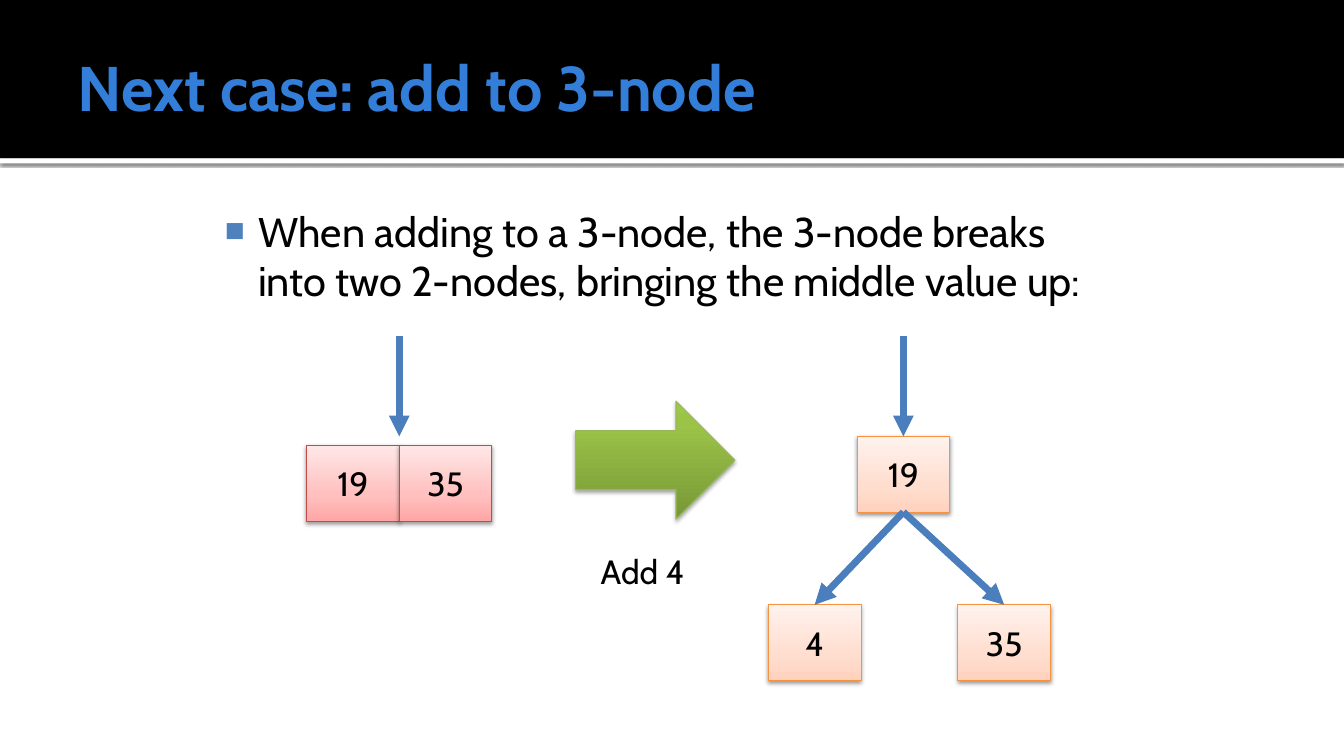
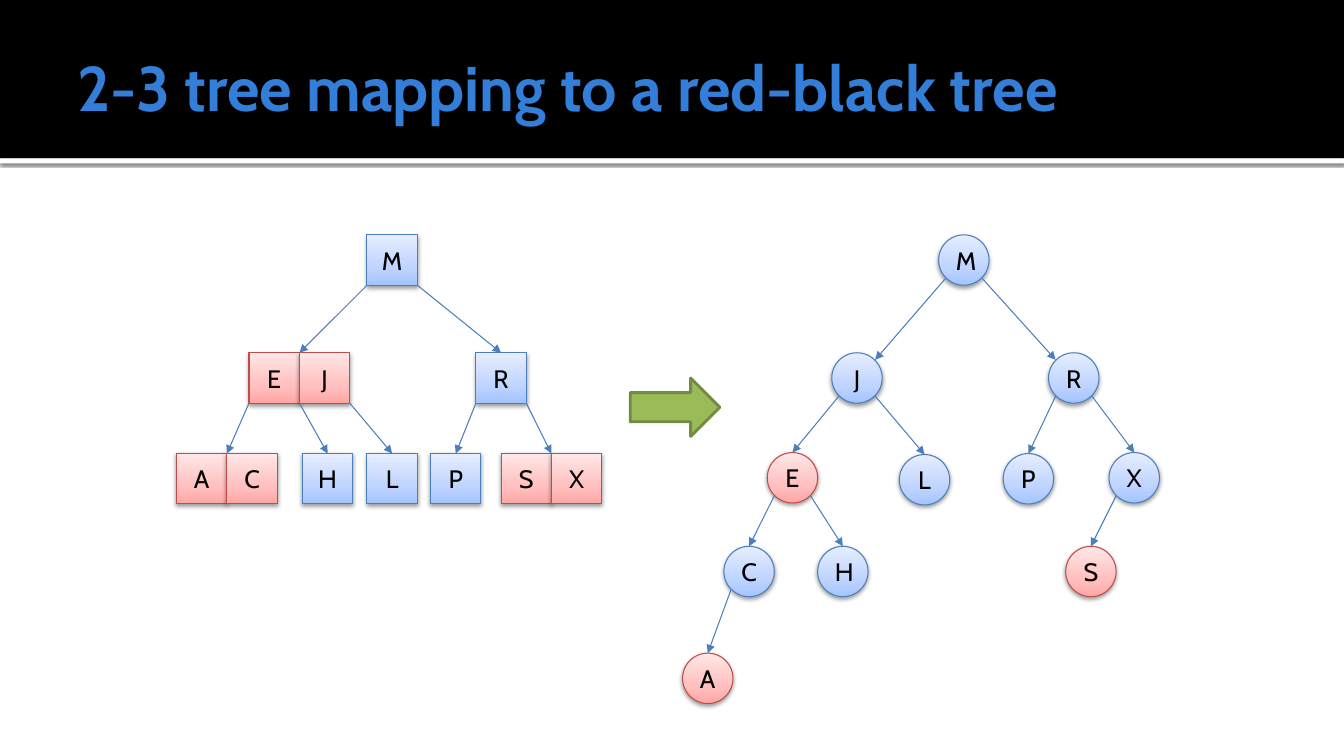
from lxml import etree
from pptx import Presentation
from pptx.dml.color import RGBColor
from pptx.enum.shapes import MSO_CONNECTOR, MSO_SHAPE
from pptx.enum.text import MSO_ANCHOR, MSO_AUTO_SIZE, PP_ALIGN
from pptx.oxml.ns import qn
from pptx.util import Inches, Pt

RECT, OVAL, ARROW = MSO_SHAPE.RECTANGLE, MSO_SHAPE.OVAL, MSO_SHAPE.RIGHT_ARROW
STRAIGHT = MSO_CONNECTOR.STRAIGHT
LEFT, CENTER = PP_ALIGN.LEFT, PP_ALIGN.CENTER
MIDDLE, TOP = MSO_ANCHOR.MIDDLE, MSO_ANCHOR.TOP
NO_FIT = MSO_AUTO_SIZE.NONE

BLACK = RGBColor(0x00, 0x00, 0x00)
WHITE = RGBColor(0xFF, 0xFF, 0xFF)
TITLE_BLUE = RGBColor(0x33, 0x7E, 0xD9)
BULLET_BLUE = RGBColor(0x4F, 0x81, 0xBD)
LINE_BLUE = RGBColor(0x4B, 0x7E, 0xBC)
LINE_RED = RGBColor(0xBF, 0x4C, 0x48)
LINE_ORANGE = RGBColor(0xF6, 0x92, 0x40)
LINE_GREEN = RGBColor(0x98, 0xB9, 0x55)
ARROW_GREEN = RGBColor(0x9B, 0xBB, 0x59)
ARROW_EDGE = RGBColor(0x73, 0x8A, 0x42)

BLUE = ([(0, "A4C4FF"), (35, "BFD4FF"), (100, "E6EEFF")], LINE_BLUE)
RED = ([(0, "FFA6A5"), (35, "FFC0BF"), (100, "FFE7E7")], LINE_RED)
ORANGE = ([(0, "FFD2BD"), (35, "FFDED0"), (100, "FFF2ED")], LINE_ORANGE)
GREEN = ([(0, "779737"), (80, "9BC348"), (100, "9DC746")], LINE_GREEN)

NODE_SHADOW = (38, 3.1, 1.6)
ARROW_SHADOW = (35, 3.1, 1.8)
BAND_SHADOW = (60, 2.5, 0.8)

FONT = "Cabin"
TITLE_FONT = {"name": FONT, "size": Pt(45), "bold": True}
BODY_FONT = {"name": FONT, "size": Pt(29.6)}
LARGE_FONT = {"name": FONT, "size": Pt(24)}
SMALL_FONT = {"name": FONT, "size": Pt(18)}

BOX_W, BOX_H = 0.92, 0.75
NODE = 0.5
DIAGONAL = 0.18

TWO_THREE_TREE = {
    "M": (3.64, 2.33, BLUE, ["EJ", "R"]),
    "EJ": (2.47, 3.5, RED, ["AC", "H", "L"]),
    "R": (4.72, 3.5, BLUE, ["P", "SX"]),
    "AC": (1.75, 4.5, RED, []),
    "H": (3, 4.5, BLUE, []),
    "L": (3.64, 4.5, BLUE, []),
    "P": (4.27, 4.5, BLUE, []),
    "SX": (4.97, 4.5, RED, []),
}

RED_BLACK_TREE = {
    "M": (9.31, 2.33, BLUE, "J", "R"),
    "J": (8.25, 3.5, BLUE, "E", "L"),
    "R": (10.4, 3.5, BLUE, "P", "X"),
    "E": (7.61, 4.49, RED, "C", "H"),
    "L": (8.92, 4.51, BLUE, None, None),
    "P": (9.95, 4.5, BLUE, None, None),
    "X": (11, 4.49, BLUE, "S", None),
    "C": (7.18, 5.42, BLUE, "A", None),
    "H": (8.11, 5.42, BLUE, None, None),
    "S": (10.57, 5.42, RED, None, None),
    "A": (6.77, 6.48, RED, None, None),
}


def add_xml(parent, tag, **attrs):
    return etree.SubElement(parent, qn(tag), {k: str(v) for k, v in attrs.items()})


def place(shape, left, top, width, height):
    box = {"left": left, "top": top, "width": width, "height": height}
    for name, value in box.items():
        setattr(shape, name, Inches(value))


def write(tf, text, font, color, align=CENTER):
    p = tf.paragraphs[0]
    p.alignment = align
    p.space_before = Pt(0)
    r = p.add_run()
    r.text = text
    for name, value in font.items():
        setattr(r.font, name, value)
    r.font.color.rgb = color
    return p


def format_frame(tf, left, top, right, bottom, anchor):
    frame = {
        "margin_left": Inches(left), "margin_top": Inches(top),
        "margin_right": Inches(right), "margin_bottom": Inches(bottom),
        "vertical_anchor": anchor, "auto_size": NO_FIT, "word_wrap": True,
    }
    for name, value in frame.items():
        setattr(tf, name, value)


def add_shadow(shape, alpha, blur, dist):
    effects = shape.element.spPr.find(qn("a:effectLst"))
    shadow = add_xml(effects, "a:outerShdw", blurRad=Pt(blur), dist=Pt(dist),
                     dir=5400000, rotWithShape=0)
    color = add_xml(shadow, "a:srgbClr", val=BLACK)
    add_xml(color, "a:alpha", val=alpha * 1000)


def add_solid(shapes, kind, box, fill, edge=None, weight=0.75):
    shape = shapes.add_shape(kind, *map(Inches, box))
    shape.shadow.inherit = False
    shape.fill.solid()
    shape.fill.fore_color.rgb = fill
    if edge is None:
        shape.line.fill.background()
    else:
        shape.line.color.rgb = edge
        shape.line.width = Pt(weight)
    return shape


def add_shaded(shapes, kind, box, style, shadow):
    stops, edge = style
    shape = add_solid(shapes, kind, box, WHITE, edge)
    shape.fill.gradient()
    shape.fill.gradient_angle = 90
    stop_list = shape.element.spPr.find(qn("a:gradFill")).find(qn("a:gsLst"))
    stop_list.clear()
    for pos, color in stops:
        add_xml(add_xml(stop_list, "a:gs", pos=pos * 1000), "a:srgbClr", val=color)
    add_shadow(shape, *shadow)
    return shape


def add_node(shapes, kind, box, text, style, font):
    shape = add_shaded(shapes, kind, box, style, NODE_SHADOW)
    tf = shape.text_frame
    tf.vertical_anchor = MIDDLE
    write(tf, text, font, BLACK)


def add_arrow(shapes, start, end, weight=0.75):
    line = shapes.add_connector(STRAIGHT, *map(Inches, (*start, *end)))
    line.line.color.rgb = LINE_BLUE
    line.line.width = Pt(weight)
    spPr = line.element.spPr
    add_xml(spPr.find(qn("a:ln")), "a:tailEnd", type="triangle")
    add_xml(spPr, "a:effectLst")


def add_title(s, text):
    tf = s.shapes.title.text_frame
    format_frame(tf, 0.1, 0.05, 0.05, 0.05, MIDDLE)
    write(tf, text, TITLE_FONT, TITLE_BLUE, LEFT)


def add_bullet(s, text):
    body = s.placeholders[1]
    place(body, 2.17, 1.94, 9, 1.56)
    tf = body.text_frame
    format_frame(tf, 0.06, 0.1, 0.1, 0.05, TOP)
    p = write(tf, text, BODY_FONT, BLACK, LEFT)
    pPr = p._p.get_or_add_pPr()
    pPr.set("marL", str(Inches(0.33)))
    pPr.set("indent", str(Inches(-0.33)))
    add_xml(add_xml(pPr, "a:buClr"), "a:srgbClr", val=BULLET_BLUE)
    add_xml(pPr, "a:buSzPct", val=80000)
    add_xml(pPr, "a:buFont", typeface="Arial")
    add_xml(pPr, "a:buChar", char="■")


def set_up_master(prs, s):
    master = prs.slide_master
    place(master.placeholders[0], 0.67, 0.17, 12, 1.37)
    rule = add_solid(s.shapes, RECT, (0, 1.57, 13.33, 0.05), WHITE)
    add_shadow(rule, *BAND_SHADOW)
    band = add_solid(s.shapes, RECT, (0, 0, 13.33, 1.57), BLACK)
    for i, shape in enumerate((rule, band)):
        shape.element.nvSpPr.cNvPr.set("id", str(100 + i))
        master.shapes.element.insert(2 + i, shape.element)


def add_split_slide(s):
    add_title(s, "Next case: add to 3-node")
    add_bullet(s, "When adding to a 3-node, the 3-node breaks into two 2-nodes, "
                  "bringing the middle value up:")
    for x in (3.96, 8.96):
        add_arrow(s.shapes, (x, 3.33), (x, 4.33), 5)
    add_shaded(s.shapes, ARROW, (5.71, 3.98, 1.58, 1.17), GREEN, ARROW_SHADOW)
    label = s.shapes.add_textbox(*map(Inches, (5.46, 5.42, 1.83, 0.5)))
    label.text_frame.word_wrap = True
    write(label.text_frame, "Add 4", LARGE_FONT, BLACK)
    boxes = [
        ("19", 3.04, 4.42, RED), ("35", 3.04 + BOX_W, 4.42, RED),
        ("19", 8.5, 4.33, ORANGE), ("4", 7.62, 6, ORANGE), ("35", 9.5, 6, ORANGE),
    ]
    for text, x, y, style in boxes:
        add_node(s.shapes, RECT, (x, y, BOX_W, BOX_H), text, style, LARGE_FONT)
    for x in (7.62, 9.5):
        add_arrow(s.shapes, (8.96, 4.33 + BOX_H), (x + BOX_W / 2, 6), 5)


def add_two_three_tree(shapes):
    for keys, (x, y, style, _) in TWO_THREE_TREE.items():
        for i, key in enumerate(keys):
            box = (x + i * NODE, y, NODE, NODE)
            add_node(shapes, RECT, box, key, style, SMALL_FONT)
    for x, y, _, children in TWO_THREE_TREE.values():
        for i, child in enumerate(children):
            child_x, child_y = TWO_THREE_TREE[child][:2]
            end = (child_x + len(child) * NODE / 2, child_y)
            add_arrow(shapes, (x + i * NODE, y + NODE), end)


def add_red_black_tree(shapes):
    for key, (x, y, style, *_) in RED_BLACK_TREE.items():
        add_node(shapes, OVAL, (x, y, NODE, NODE), key, style, SMALL_FONT)
    for key, (x, y, _, *children) in RED_BLACK_TREE.items():
        for side, child in zip((-1, 1), children):
            if child is None:
                continue
            mid = NODE / 2
            start = (x + mid + side * DIAGONAL, y + mid + DIAGONAL)
            child_x, child_y = RED_BLACK_TREE[child][:2]
            end = (child_x + mid, child_y)
            if key == "M":
                end = (child_x + mid - side * DIAGONAL, child_y + mid - DIAGONAL)
            add_arrow(shapes, start, end)


def add_mapping_slide(s):
    add_title(s, "2-3 tree mapping to a red-black tree")
    add_two_three_tree(s.shapes.add_group_shape().shapes)
    add_red_black_tree(s.shapes.add_group_shape().shapes)
    add_solid(s.shapes, ARROW, (6.25, 3.75, 0.89, 0.58), ARROW_GREEN, ARROW_EDGE, 2)


def main():
    prs = Presentation()
    prs.slide_width, prs.slide_height = Inches(13.33), Inches(7.5)
    split = prs.slides.add_slide(prs.slide_layouts[1])
    set_up_master(prs, split)
    add_split_slide(split)
    add_mapping_slide(prs.slides.add_slide(prs.slide_layouts[5]))
    prs.save("out.pptx")


if __name__ == "__main__":
    main()
